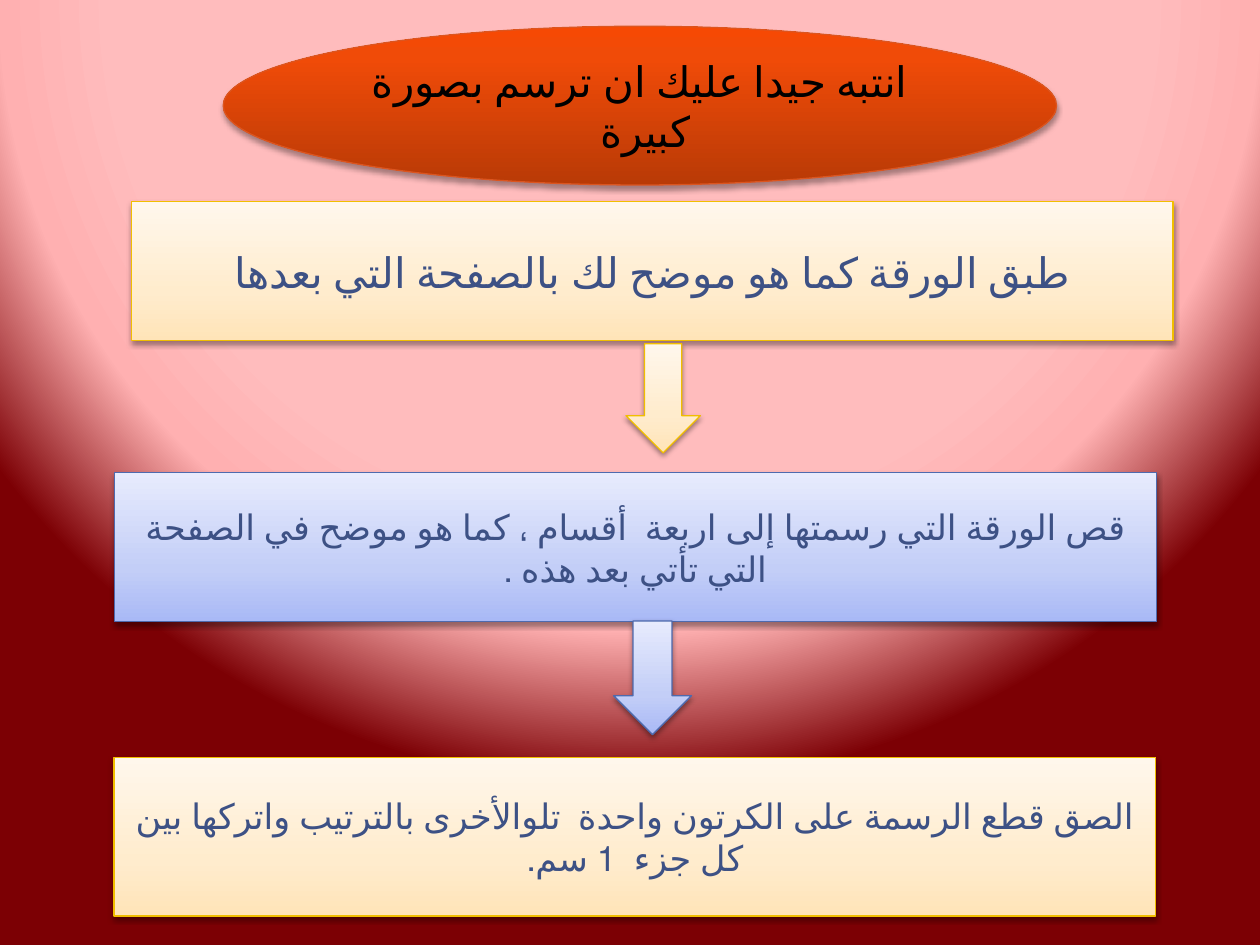
"""Build a slide of three right-to-left craft steps joined by block arrows."""
from dataclasses import dataclass

from lxml import etree
from pptx import Presentation
from pptx import util as u
from pptx.dml.color import RGBColor
from pptx.enum import lang, shapes, text
from pptx.oxml import ns

INK = RGBColor(0x3D, 0x51, 0x85)
BLACK = RGBColor(0, 0, 0)
GOLD = RGBColor(0xF1, 0xBE, 0x00)
BLUE = RGBColor(0x4E, 0x6A, 0xAE)
RUST = RGBColor(0xDC, 0x55, 0x1F)
FONT = "Calibri"
STEP_WIDTH = 21


@dataclass(frozen=True)
class Stop:
    percent: int
    color: RGBColor


@dataclass(frozen=True)
class Palette:
    stops: tuple[Stop, ...]
    outline: RGBColor
    shadow_opacity: int = 38
    shadow_distance: float = 1.6


@dataclass(frozen=True)
class Block:
    kind: shapes.MSO_SHAPE
    left: float
    top: float
    width: float
    height: float
    palette: Palette
    wording: str = ""
    size: int = 20
    color: RGBColor = INK


BACKDROP = (
    Stop(65, RGBColor(0xFF, 0xBC, 0xBD)),
    Stop(80, RGBColor(0xFF, 0xB0, 0xB1)),
    Stop(100, RGBColor(0x7C, 0x00, 0x04)),
)
CREAM = Palette((
    Stop(0, RGBColor(0xFF, 0xE4, 0xB8)),
    Stop(35, RGBColor(0xFF, 0xEC, 0xCD)),
    Stop(100, RGBColor(0xFF, 0xF7, 0xEC)),
), GOLD)
SKY = Palette((
    Stop(0, RGBColor(0xA9, 0xB9, 0xF6)),
    Stop(35, RGBColor(0xC3, 0xCE, 0xF7)),
    Stop(100, RGBColor(0xE7, 0xEB, 0xFD)),
), BLUE)
ORANGE = Palette((
    Stop(0, RGBColor(0xB9, 0x3A, 0x06)),
    Stop(80, RGBColor(0xF0, 0x4B, 0x08)),
    Stop(100, RGBColor(0xF6, 0x49, 0x04)),
), RUST, 35, 1.8)

RECT = shapes.MSO_SHAPE.RECTANGLE
ARROW = shapes.MSO_SHAPE.DOWN_ARROW
BLOCKS = (
    Block(RECT, 2.65, 4.07, STEP_WIDTH, 2.8, CREAM,
          "طبق الورقة كما هو موضح لك بالصفحة التي بعدها", 24),
    Block(ARROW, 12.62, 6.93, 1.5, 2.2, CREAM),
    Block(RECT, 2.3, 15.27, STEP_WIDTH, 3.2, CREAM,
          "الصق قطع الرسمة على الكرتون واحدة  تلوالأخرى بالترتيب واتركها بين كل جزء  1 سم."),
    Block(RECT, 2.31, 9.53, STEP_WIDTH, 3, SKY,
          "قص الورقة التي رسمتها إلى اربعة  أقسام ، كما هو موضح في الصفحة التي تأتي بعد هذه ."),
    Block(ARROW, 12.37, 12.52, 1.57, 2.29, SKY),
    Block(shapes.MSO_SHAPE.OVAL, 4.5, 0.53, 16.8, 3.2, ORANGE,
          "انتبه جيدا عليك ان ترسم بصورة كبيرة ", 24, BLACK),
)


def add_node(parent: etree.ElementBase, tag: str, **attributes: object) -> etree.ElementBase:
    node = etree.SubElement(parent, ns.qn(tag))
    for name, value in attributes.items():
        node.set(name, str(value))
    return node


def add_color(parent: etree.ElementBase, color: RGBColor) -> etree.ElementBase:
    return add_node(parent, "a:srgbClr", val=color)


def start_gradient(owner: etree.ElementBase, stops: tuple[Stop, ...]) -> etree.ElementBase:
    gradient = owner.find(".//" + ns.qn("a:gradFill"))
    for child in list(gradient):
        gradient.remove(child)
    stop_list = add_node(gradient, "a:gsLst")
    for stop in stops:
        add_color(add_node(stop_list, "a:gs", pos=stop.percent * 1000), stop.color)
    return gradient


def paint_background(slide) -> None:
    slide.background.fill.gradient()
    gradient = start_gradient(slide.element, BACKDROP)
    circle = add_node(gradient, "a:path", path="circle")
    add_node(circle, "a:fillToRect", l=50000, t=-80000, r=50000, b=180000)


def add_shadow(shape, palette: Palette) -> None:
    shape.shadow.inherit = False
    effects = shape.element.spPr.find(ns.qn("a:effectLst"))
    shadow = add_node(effects, "a:outerShdw", blurRad=u.Pt(3.1),
                      dist=u.Pt(palette.shadow_distance), dir=5400000, rotWithShape=0)
    add_node(add_color(shadow, BLACK), "a:alpha", val=palette.shadow_opacity * 1000)


def write_text(shape, wording: str, *, size: int, color: RGBColor) -> None:
    frame = shape.text_frame
    frame.word_wrap = True
    frame.vertical_anchor = text.MSO_ANCHOR.MIDDLE
    paragraph = frame.paragraphs[0]
    paragraph.alignment = text.PP_ALIGN.CENTER
    paragraph._p.get_or_add_pPr().set("rtl", "1")
    run = paragraph.add_run()
    run.text = wording
    run.font.name = FONT
    run.font.size = u.Pt(size)
    run.font.color.rgb = color
    run.font.language_id = lang.MSO_LANGUAGE_ID.ARABIC


def draw_block(slide, block: Block) -> None:
    shape = slide.shapes.add_shape(block.kind, u.Cm(block.left), u.Cm(block.top),
                                   u.Cm(block.width), u.Cm(block.height))
    shape.fill.gradient()
    gradient = start_gradient(shape.element, block.palette.stops)
    add_node(gradient, "a:lin", ang=270 * 60000, scaled=0)
    shape.line.color.rgb = block.palette.outline
    shape.line.width = u.Pt(0.75)
    add_shadow(shape, block.palette)
    if block.wording:
        write_text(shape, block.wording, size=block.size, color=block.color)


def main() -> None:
    deck = Presentation()
    deck.slide_width, deck.slide_height = u.Cm(25.4), u.Cm(19.05)
    slide = deck.slides.add_slide(deck.slide_layouts[6])
    paint_background(slide)
    for block in BLOCKS:
        draw_block(slide, block)
    deck.save("out.pptx")


if __name__ == "__main__":
    main()
